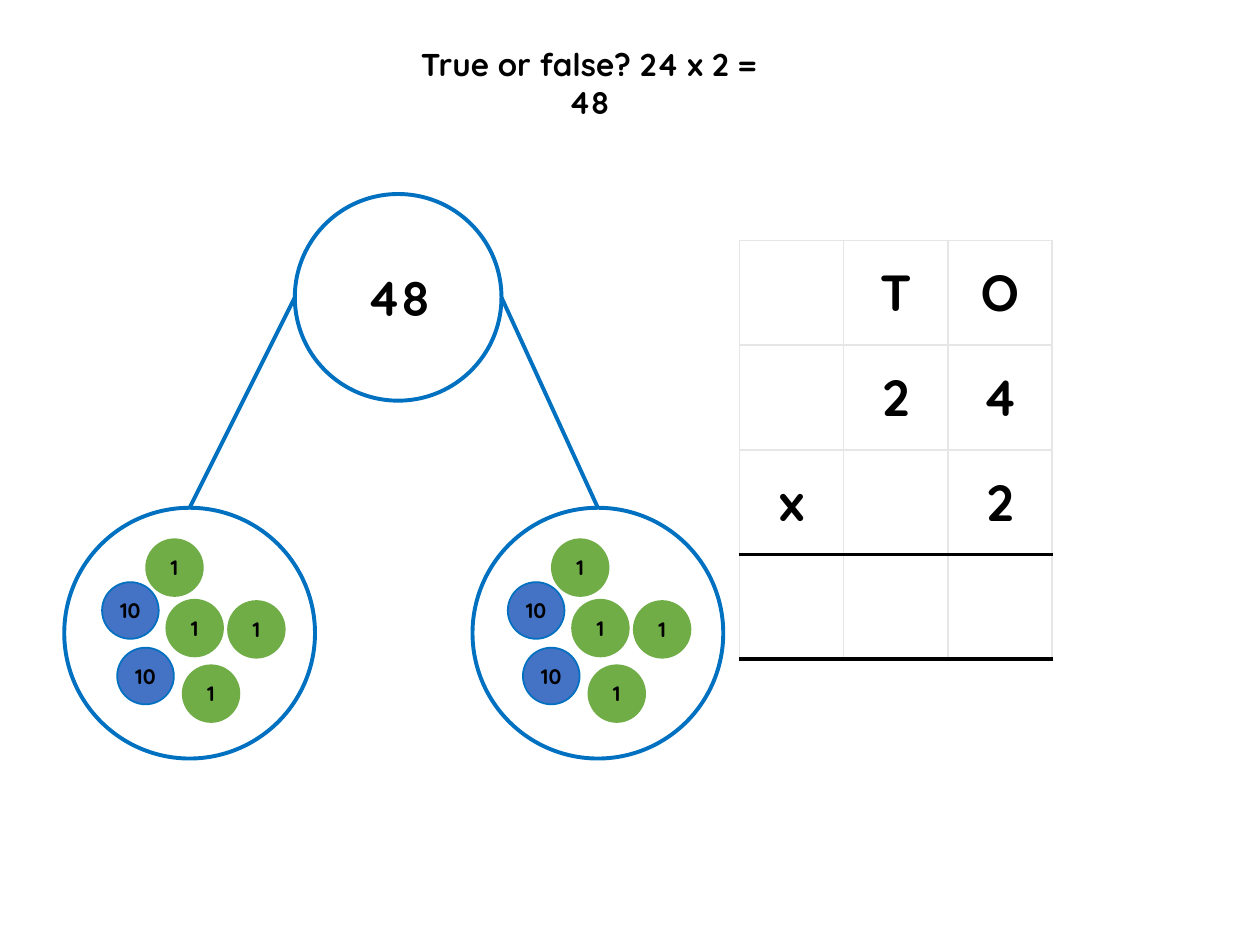
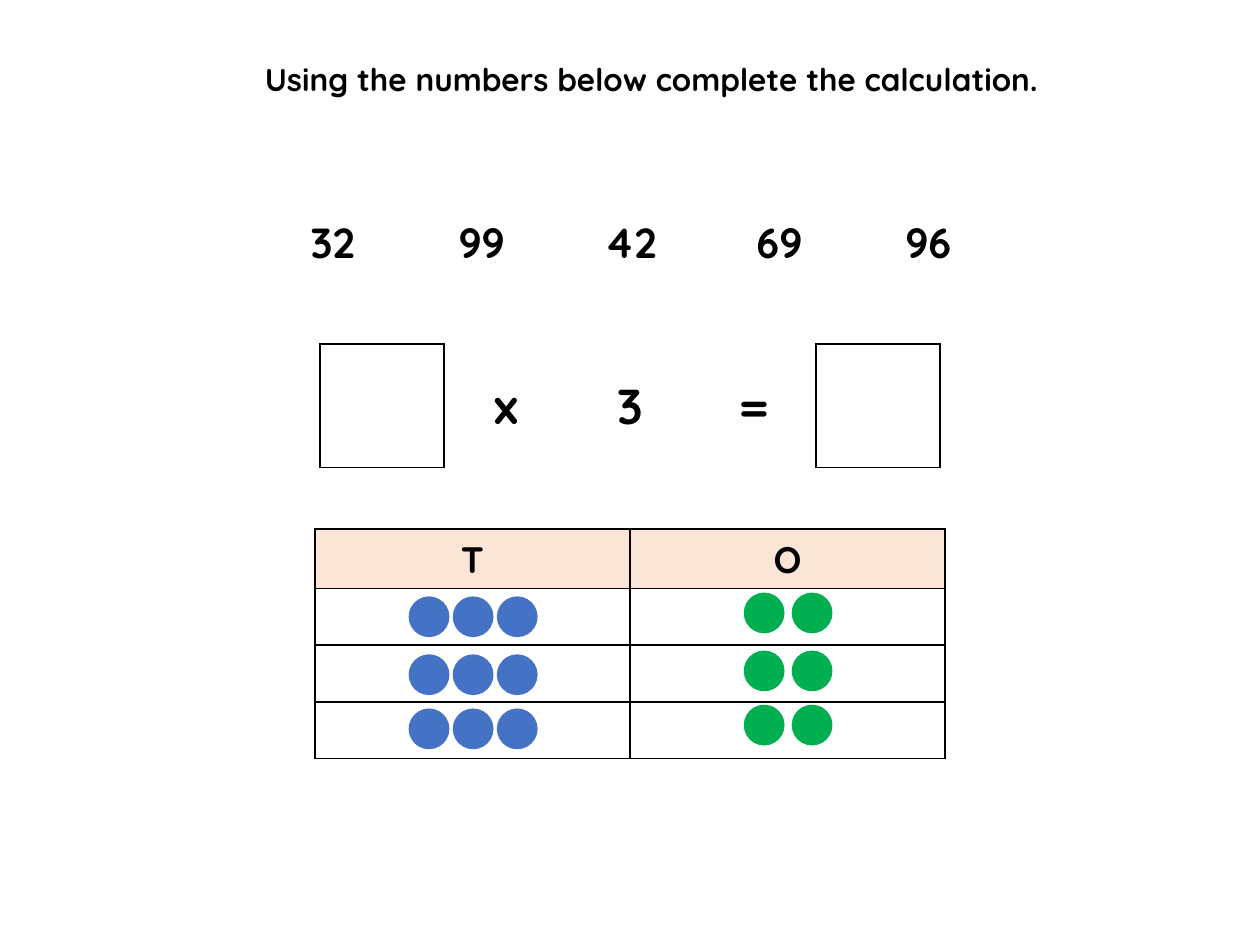
from lxml import etree
from pptx import Presentation
from pptx.dml.color import RGBColor
from pptx.enum.shapes import MSO_CONNECTOR, MSO_SHAPE
from pptx.enum.text import MSO_ANCHOR, PP_ALIGN
from pptx.oxml.ns import qn
from pptx.util import Pt

OVAL = MSO_SHAPE.OVAL
STRAIGHT = MSO_CONNECTOR.STRAIGHT
MIDDLE = MSO_ANCHOR.MIDDLE
CENTER = PP_ALIGN.CENTER
PX = 9144


class Theme:
    font = "Quicksand"
    black = "000000"
    white = "FFFFFF"
    grid = "E7E6E6"
    outline = "0070C0"
    tens = "4472C4"
    ones = "70AD47"
    green = "00B050"
    header = "FBE5D6"
    title = 18
    counter = 12
    heading = 21
    number = 24
    total = 28
    digit = 29
    thin = 1
    heavy = 2.25


def write(tf, text, size):
    p = tf.paragraphs[0]
    p.alignment = CENTER
    r = p.add_run()
    r.text = text
    r.font.name = Theme.font
    r.font.size = Pt(size)
    r.font.bold = True
    r.font.color.rgb = RGBColor.from_string(Theme.black)


def add_disc(shapes, x, y, d, fill, line, weight, text="", size=0):
    sp = shapes.add_shape(OVAL, x * PX, y * PX, d * PX, d * PX)
    sp.shadow.inherit = False
    sp.fill.solid()
    sp.fill.fore_color.rgb = RGBColor.from_string(fill)
    sp.line.color.rgb = RGBColor.from_string(line)
    sp.line.width = Pt(weight)
    if text:
        tf = sp.text_frame
        tf.word_wrap = False
        tf.vertical_anchor = MIDDLE
        write(tf, text, size)
    return sp


prs = Presentation()
prs.slide_width = 1000 * PX
prs.slide_height = 750 * PX
blank = prs.slide_layouts[6]
check = prs.slides.add_slide(blank)
puzzle = prs.slides.add_slide(blank)

titles = [
    (check, 310, 31, 315, "True or false? 24 x 2 = 48"),
    (puzzle, 175, 43, 691, "Using the numbers below complete the calculation. "),
]
for s, x, y, w, text in titles:
    tf = s.shapes.add_textbox(x * PX, y * PX, w * PX, 40 * PX).text_frame
    tf.word_wrap = True
    write(tf, text, Theme.title)

ALL = "LRTB"
tables = [
    dict(slide=check, at=(587, 191), width=248, heights=[83] * 4, size=Theme.digit,
         rows=[["", "T", "O"], ["", "2", "4"], ["x", "", "2"], ["", "", ""]],
         sides=[ALL] * 3, edge=Theme.grid, rules=["2B", "3T", "3B"],
         fills=[Theme.white] * 4, margins=(0, 0)),
    dict(slide=puzzle, at=(205, 153), width=591, heights=[79], size=Theme.number,
         rows=[["32", "99", "42", "69", "96"]],
         sides=[""] * 5, edge=Theme.black, rules=[],
         fills=[None], margins=(0, 0)),
    dict(slide=puzzle, at=(254, 273), width=492, heights=[98], size=Theme.total,
         rows=[["", "x", "3", "=", ""]],
         sides=[ALL, "L", "", "R", ALL], edge=Theme.black, rules=[],
         fills=[None], margins=(0, 0)),
    dict(slide=puzzle, at=(250, 420), width=500, heights=[47, 45, 45, 45], size=Theme.heading,
         rows=[["T", "O"]] + [["", ""]] * 3,
         sides=[ALL] * 2, edge=Theme.black, rules=[],
         fills=[Theme.header] + [Theme.white] * 3, margins=(10, 6)),
]
for t in tables:
    x, y = t["at"]
    rows, heights = t["rows"], t["heights"]
    table = t["slide"].shapes.add_table(
        len(rows), len(rows[0]), x * PX, y * PX, t["width"] * PX, sum(heights) * PX).table
    table.first_row = table.horz_banding = False
    for i, row in enumerate(rows):
        table.rows[i].height = heights[i] * PX
        for j, text in enumerate(row):
            cell = table.cell(i, j)
            cell.vertical_anchor = MIDDLE
            cell.margin_left = cell.margin_right = t["margins"][0] * PX
            cell.margin_top = cell.margin_bottom = t["margins"][1] * PX
            tcPr = cell._tc.get_or_add_tcPr()
            for side in t["sides"][j]:
                ruled = f"{i}{side}" in t["rules"]
                weight = Theme.heavy if ruled else Theme.thin
                ln = etree.SubElement(tcPr, qn(f"a:ln{side}"), w=str(Pt(weight)))
                fill = etree.SubElement(ln, qn("a:solidFill"))
                color = Theme.black if ruled else t["edge"]
                etree.SubElement(fill, qn("a:srgbClr"), val=color)
            if t["fills"][i]:
                cell.fill.solid()
                cell.fill.fore_color.rgb = RGBColor.from_string(t["fills"][i])
            else:
                cell.fill.background()
            if text:
                write(cell.text_frame, text, t["size"])

add_disc(check.shapes, 234, 154, 164, Theme.white, Theme.outline, Theme.heavy, "48", Theme.total)
counters = [
    ("10", 0, 0), ("1", 51, 14), ("10", 12, 52),
    ("1", 35, -34), ("1", 64, 66), ("1", 100, 15),
]
counter_colors = {"10": (Theme.tens, Theme.outline), "1": (Theme.ones, Theme.ones)}
for part_x, cluster_x, whole_x in [(51, 81, 234), (375, 403, 398)]:
    part = add_disc(check.shapes, part_x, 403, 199, Theme.white, Theme.outline, Theme.heavy)
    link = check.shapes.add_connector(STRAIGHT, whole_x * PX, 236 * PX, part_x * PX, 403 * PX)
    link.end_connect(part, 0)
    link.line.color.rgb = RGBColor.from_string(Theme.outline)
    link.line.width = Pt(Theme.heavy)
    etree.SubElement(link._element.spPr, qn("a:effectLst"))
    cluster = check.shapes.add_group_shape()
    for value, dx, dy in counters:
        fill, line = counter_colors[value]
        add_disc(cluster.shapes, cluster_x + dx, 462 + dy, 45, fill, line, Theme.thin,
                 value, Theme.counter)

for x, y, step, count, color in [(325, 474, 35, 3, Theme.tens), (591, 471, 38, 2, Theme.green)]:
    dots = puzzle.shapes.add_group_shape()
    for column in range(count):
        for dy in (0, 46, 89):
            add_disc(dots.shapes, x + column * step, y + dy, 31, color, color, Theme.thin)

prs.save("out.pptx")
